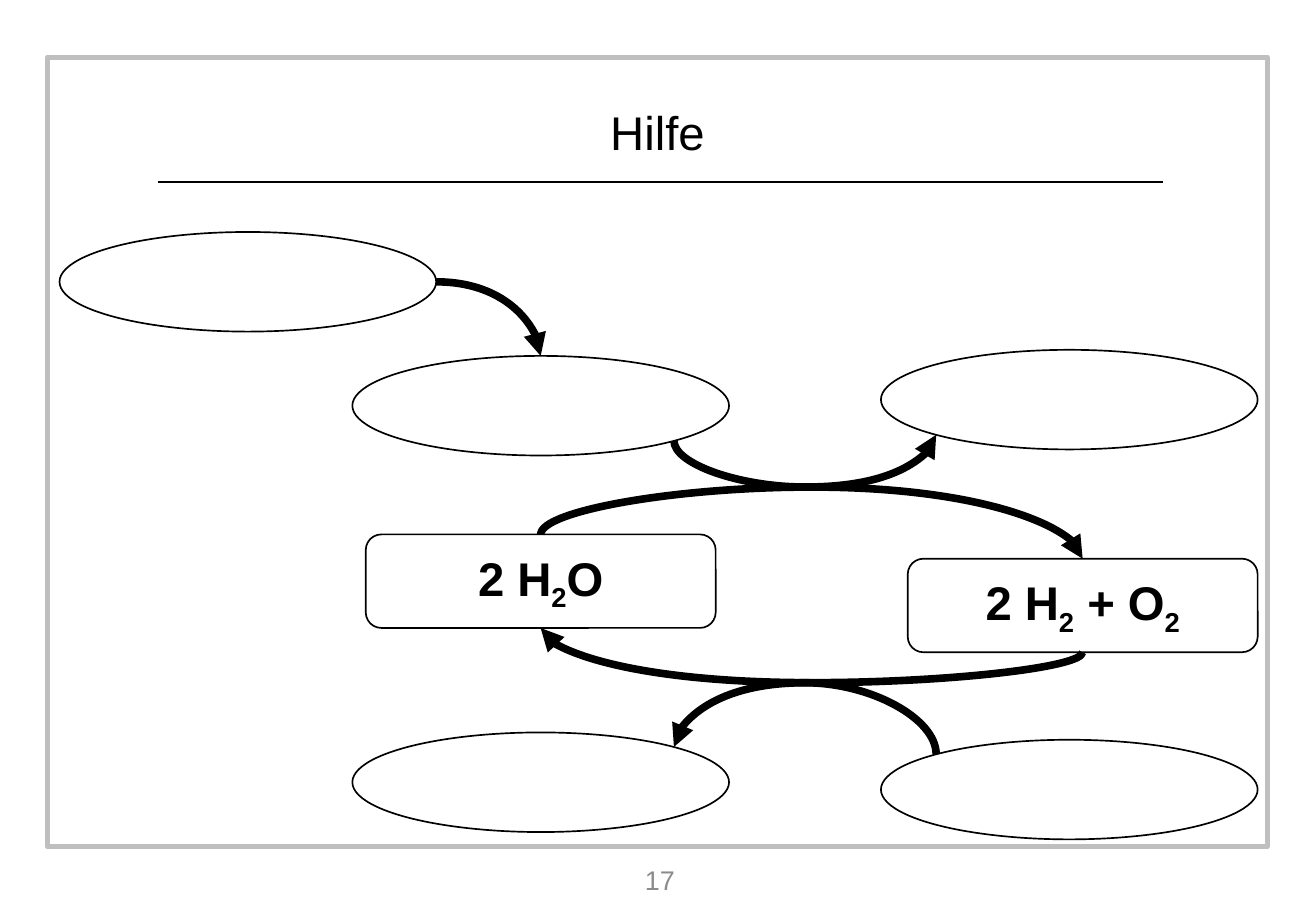
import pptx
import pptx.util
import pptx.dml.color
import pptx.enum.shapes
import pptx.enum.text
import pptx.oxml
import pptx.oxml.ns

Inches = pptx.util.Inches
Pt = pptx.util.Pt
qn = pptx.oxml.ns.qn
Kind = pptx.enum.shapes.MSO_SHAPE
Link = pptx.enum.shapes.MSO_CONNECTOR

COLORS = {"ink": "000000", "paper": "FFFFFF", "frame": "BFBFBF", "page": "8C8C8C"}
DIAG = 0.3536  # offset of the diagonal sites of an ellipse, as a share of its size
# Connection sites: index, then offset from the centre as shares of width and height
OVAL = {"top": (0, 0, -0.5), "top left": (1, -DIAG, -DIAG),
        "low left": (3, -DIAG, DIAG), "low right": (5, DIAG, DIAG),
        "right": (6, 0.5, 0), "top right": (7, DIAG, -DIAG)}
BOX = {"top": (0, 0, -0.5), "low": (2, 0, 0.5)}


def color(name):
    return pptx.dml.color.RGBColor.from_string(COLORS[name])


def add_node(slide, kind, left, top, width, height, line="ink", weight=1, fill="paper"):
    node = slide.shapes.add_shape(kind, Inches(left), Inches(top), Inches(width), Inches(height))
    node.shadow.inherit = False
    if fill:
        node.fill.solid()
        node.fill.fore_color.rgb = color(fill)
    else:
        node.fill.background()
    node.line.color.rgb = color(line)
    node.line.width = Pt(weight)
    return node


def add_oval(slide, left, top):
    return add_node(slide, Kind.OVAL, left, top, 3.1, 0.82)


def write(shape, parts, size, ink="ink", bold=False, wrap=True):
    """Write the parts as runs; a part that is only digits after the first is subscript."""
    frame = shape.text_frame
    frame.word_wrap = wrap
    frame.vertical_anchor = pptx.enum.text.MSO_ANCHOR.MIDDLE
    para = frame.paragraphs[0]
    para.alignment = pptx.enum.text.PP_ALIGN.CENTER
    for place, part in enumerate(parts):
        run = para.add_run()
        run.text = part
        run.font.name = "Arial"
        run.font.size = Pt(size)
        run.font.bold = bold
        run.font.color.rgb = color(ink)
        if place and part.isdigit():
            run.font._element.set("baseline", "-25000")


def add_label(slide, left, top, width, height, text, size, ink="ink", wrap=True):
    box = slide.shapes.add_textbox(Inches(left), Inches(top), Inches(width), Inches(height))
    write(box, [text], size, ink, wrap=wrap)


def add_box(slide, left, top, parts):
    box = add_node(slide, Kind.ROUNDED_RECTANGLE, left, top, 2.88, 0.77)
    write(box, parts, 28, bold=True)
    return box


def add_line(slide, kind, start, end, weight):
    points = [round(value) for value in (*start, *end)]
    line = slide.shapes.add_connector(kind, *points)
    line.line.color.rgb = color("ink")
    line.line.width = Pt(weight)
    pptx.oxml.ns  # namespace table used by qn
    line._element.spPr.append(line._element.makeelement(qn("a:effectLst"), {}))
    return line


def find_site(shape, site):
    _, across, down = site
    return (shape.left + shape.width * (0.5 + across),
            shape.top + shape.height * (0.5 + down))


def add_child(parent, tag, **values):
    child = parent.makeelement(qn(tag), values)
    parent.append(child)
    return child


def add_arrow(slide, source, out, target, into, bend=None):
    """Curve between two sites; bend is the height that a U-shaped curve reaches."""
    (x1, y1), (x2, y2) = find_site(source, out), find_site(target, into)
    start, end = (x1, y1), (x2, y2)
    if bend is not None:
        # The curve is laid out sideways about its middle, then turned upright
        turn = 1 if Inches(bend) > y1 else -1
        mid_x, mid_y = (x1 + x2) / 2, (y1 + y2) / 2
        half_x, half_y = turn * (y2 - y1) / 2, turn * (x1 - x2) / 2
        start = (mid_x - half_x, mid_y - half_y)
        end = (mid_x + half_x, mid_y + half_y)
    arrow = add_line(slide, Link.CURVE, start, end, 4.5)
    root = arrow._element
    add_child(arrow.line._get_or_add_ln(), "a:tailEnd", type="triangle")
    geom = root.spPr.find(qn("a:prstGeom"))
    if bend is None:
        geom.set("prst", "curvedConnector2")
    else:
        root.spPr.find(qn("a:xfrm")).set("rot", str(turn % 4 * 5400000))
        share = round((Inches(bend) - y1) / (y2 - y1) * 100000)
        add_child(geom.find(qn("a:avLst")), "a:gd", name="adj1", fmla=f"val {share}")
    joints = root.find(qn("p:nvCxnSpPr")).find(qn("p:cNvCxnSpPr"))
    for tag, shape, site in (("a:stCxn", source, out), ("a:endCxn", target, into)):
        add_child(joints, tag, id=str(shape.shape_id), idx=str(site[0]))


def main():
    deck = pptx.Presentation()
    deck.slide_width, deck.slide_height = Inches(10.83), Inches(7.5)
    slide = deck.slides.add_slide(deck.slide_layouts[6])

    add_node(slide, Kind.RECTANGLE, 0.39, 0.47, 10.04, 6.5, "frame", 3, None)
    add_line(slide, Link.STRAIGHT, (Inches(1.3), Inches(1.5)), (Inches(9.57), Inches(1.5)), 1.5)
    add_label(slide, 4.92, 0.79, 0.98, 0.59, "Hilfe", 28, wrap=False)
    add_label(slide, 4.21, 7.05, 2.44, 0.39, "17", 16, "page")

    first = add_oval(slide, 0.49, 1.91)
    second = add_oval(slide, 2.9, 2.93)
    upper = add_oval(slide, 7.25, 2.88)
    left = add_oval(slide, 2.9, 6.03)
    right = add_oval(slide, 7.25, 6.09)
    water = add_box(slide, 3.01, 4.4, ["2 H", "2", "O"])
    gases = add_box(slide, 7.47, 4.6, ["2 H", "2", " + O", "2"])

    add_arrow(slide, first, OVAL["right"], second, OVAL["top"])
    add_arrow(slide, water, BOX["top"], gases, BOX["top"], 4.01)
    add_arrow(slide, gases, BOX["low"], water, BOX["low"], 5.62)
    add_arrow(slide, second, OVAL["low right"], upper, OVAL["low left"], 4.01)
    add_arrow(slide, right, OVAL["top left"], left, OVAL["top right"], 5.62)

    deck.save("out.pptx")


if __name__ == "__main__":
    main()
